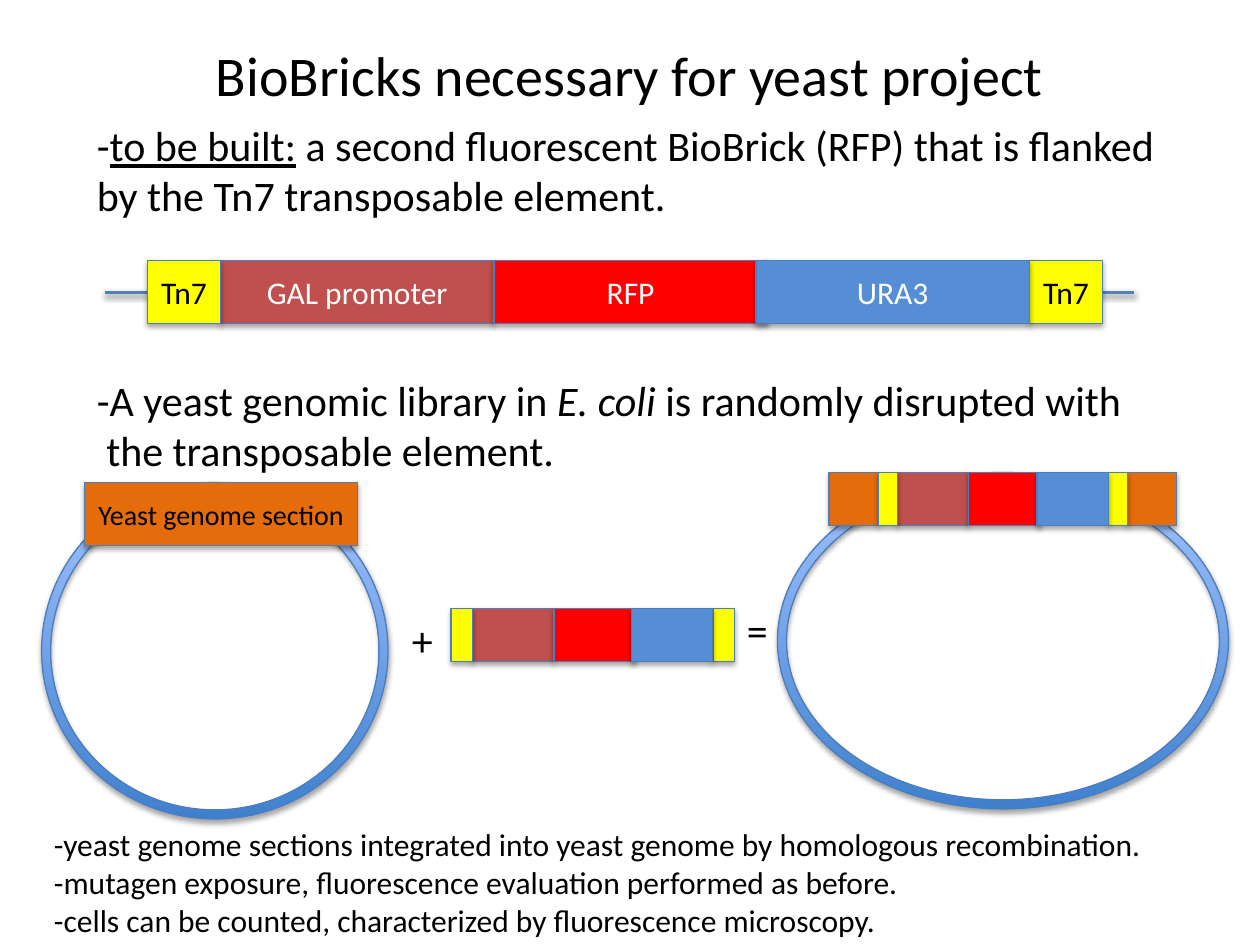
"""Build the slide on the BioBricks needed for the yeast project."""
from dataclasses import dataclass

from lxml import etree
from pptx import Presentation
from pptx import util as u
from pptx.dml.color import RGBColor
from pptx.enum import shapes, text
from pptx.oxml import ns

BLACK = RGBColor(0x00, 0x00, 0x00)
WHITE = RGBColor(0xFF, 0xFF, 0xFF)
YELLOW = RGBColor(0xFF, 0xFF, 0x00)
BRICK = RGBColor(0xC0, 0x50, 0x4D)
RED = RGBColor(0xFF, 0x00, 0x00)
BLUE = RGBColor(0x55, 0x8E, 0xD5)
ORANGE = RGBColor(0xE4, 0x6C, 0x0A)
OUTLINE = RGBColor(0x4B, 0x7E, 0xBC)
STRAND = RGBColor(0x4F, 0x81, 0xBD)
RING_LOW = RGBColor(0x3F, 0x80, 0xCE)
RING_HIGH = RGBColor(0xA4, 0xC4, 0xFF)
FONT = "Calibri"


@dataclass(frozen=True)
class Box:
    left: float
    top: float
    width: float
    height: float

    def lengths(self) -> list:
        return [u.Inches(v) for v in (self.left, self.top, self.width, self.height)]


@dataclass(frozen=True)
class Gene:
    label: str
    start: float
    width: float
    fill: RGBColor
    ink: RGBColor = WHITE


@dataclass(frozen=True)
class Span:
    wording: str
    underline: bool = False
    italic: bool = False


CASSETTE_WIDTH = 7.58
CASSETTE = (
    Gene("GAL promoter", 0.58, 2.17, BRICK),
    Gene("RFP", 2.75, 2.17, RED),
    Gene("Tn7", 7, 0.58, YELLOW, BLACK),
    Gene("Tn7", 0, 0.58, YELLOW, BLACK),
    Gene("URA3", 4.83, 2.17, BLUE),
)


def add_shadow(part, blur: float = 3.1, distance: float = 1.8, opacity: int = 35) -> None:
    properties = part._element.spPr
    for old in properties.findall(ns.qn("a:effectLst")):
        properties.remove(old)
    effects = etree.SubElement(properties, ns.qn("a:effectLst"))
    shadow = etree.SubElement(
        effects, ns.qn("a:outerShdw"), blurRad=str(u.Pt(blur)),
        dist=str(u.Pt(distance)), dir="5400000", rotWithShape="0")
    color = etree.SubElement(shadow, ns.qn("a:srgbClr"), val=str(BLACK))
    etree.SubElement(color, ns.qn("a:alpha"), val=str(opacity * 1000))


def finish(part) -> None:
    part.line.color.rgb = OUTLINE
    part.line.width = u.Pt(0.75)
    add_shadow(part)


def add_block(canvas, box: Box, fill: RGBColor, label: str = "",
              ink: RGBColor = BLACK, size: int = 18) -> None:
    block = canvas.add_shape(shapes.MSO_SHAPE.RECTANGLE, *box.lengths())
    block.fill.solid()
    block.fill.fore_color.rgb = fill
    finish(block)
    if label:
        frame = block.text_frame
        frame.text = label
        frame.word_wrap = False
        frame.vertical_anchor = text.MSO_ANCHOR.MIDDLE
        frame.paragraphs[0].alignment = text.PP_ALIGN.CENTER
        font = frame.paragraphs[0].runs[0].font
        font.name, font.size, font.color.rgb = FONT, u.Pt(size), ink


def add_cassette(canvas, box: Box, labelled: bool = False) -> None:
    scale = box.width / CASSETTE_WIDTH
    for gene in CASSETTE:
        place = Box(box.left + gene.start * scale, box.top, gene.width * scale, box.height)
        add_block(canvas, place, gene.fill, gene.label if labelled else "", gene.ink)


def add_plasmid(canvas, box: Box) -> None:
    ring = canvas.add_shape(shapes.MSO_SHAPE.DONUT, *box.lengths())
    ring.adjustments[0] = 0.027
    ring.fill.gradient()
    ring.fill.gradient_angle = 90
    for stop, color in zip(ring.fill.gradient_stops, (RING_LOW, RING_HIGH)):
        stop.color.rgb = color
    finish(ring)


def add_text(canvas, box: Box, lines: list[list[Span]], size: int, wrap: bool = True):
    frame = canvas.add_textbox(*box.lengths()).text_frame
    frame.word_wrap = wrap
    for index, spans in enumerate(lines):
        paragraph = frame.paragraphs[0] if index == 0 else frame.add_paragraph()
        for span in spans:
            run = paragraph.add_run()
            run.text = span.wording
            font = run.font
            font.name, font.size, font.color.rgb = FONT, u.Pt(size), BLACK
            font.underline, font.italic = span.underline, span.italic
    return frame


def main() -> None:
    deck = Presentation()
    deck.slide_width, deck.slide_height = u.Inches(10), u.Inches(7.5)
    canvas = deck.slides.add_slide(deck.slide_layouts[6]).shapes

    title = add_text(canvas, Box(0.5, 0.17, 9, 0.83),
                     [[Span("BioBricks necessary for yeast project")]], 32)
    title.vertical_anchor = text.MSO_ANCHOR.MIDDLE
    title.paragraphs[0].alignment = text.PP_ALIGN.CENTER

    add_text(canvas, Box(0.67, 0.9, 8.67, 0.9), [[
        Span("-"), Span("to be built:", underline=True),
        Span(" a second fluorescent BioBrick (RFP) that is flanked "
             "by the Tn7 transposable element.")]], 24)
    add_text(canvas, Box(0.67, 2.92, 8.67, 0.91), [
        [Span("-A yeast genomic library in "), Span("E. coli ", italic=True),
         Span("is randomly disrupted with")],
        [Span(" the transposable element.")]], 24)

    strand = canvas.add_connector(
        shapes.MSO_CONNECTOR.STRAIGHT, u.Inches(0.83), u.Inches(2.32), u.Inches(9), u.Inches(2.32))
    strand.line.color.rgb = STRAND
    strand.line.width = u.Pt(2)
    add_shadow(strand, distance=1.6, opacity=38)
    add_cassette(canvas, Box(1.17, 2.07, CASSETTE_WIDTH, 0.5), labelled=True)

    add_plasmid(canvas, Box(0.33, 3.83, 2.75, 2.67))
    add_block(canvas, Box(0.67, 3.83, 2.17, 0.5), ORANGE, "Yeast genome section", size=16)
    add_plasmid(canvas, Box(6.17, 3.75, 3.58, 2.67))

    add_text(canvas, Box(3.17, 4.83, 0.42, 0.51), [[Span("+")]], 24)
    add_cassette(canvas.add_group_shape().shapes, Box(3.58, 4.83, 2.25, 0.42))
    add_text(canvas, Box(5.83, 4.75, 0.42, 0.51), [[Span("=")]], 24)

    disrupted = canvas.add_group_shape().shapes
    for left in (6.58, 8.95):
        add_block(disrupted, Box(left, 3.75, 0.39, 0.42), ORANGE)
    add_cassette(disrupted, Box(6.97, 3.75, 1.98, 0.42))

    add_text(canvas, Box(0.33, 6.5, 8.91, 1.01), [
        [Span("-yeast genome sections integrated into yeast genome by homologous recombination.")],
        [Span("-mutagen exposure, fluorescence evaluation performed as before.")],
        [Span("-cells can be counted, characterized by fluorescence microscopy.")]], 18, wrap=False)
    deck.save("out.pptx")


if __name__ == "__main__":
    main()
